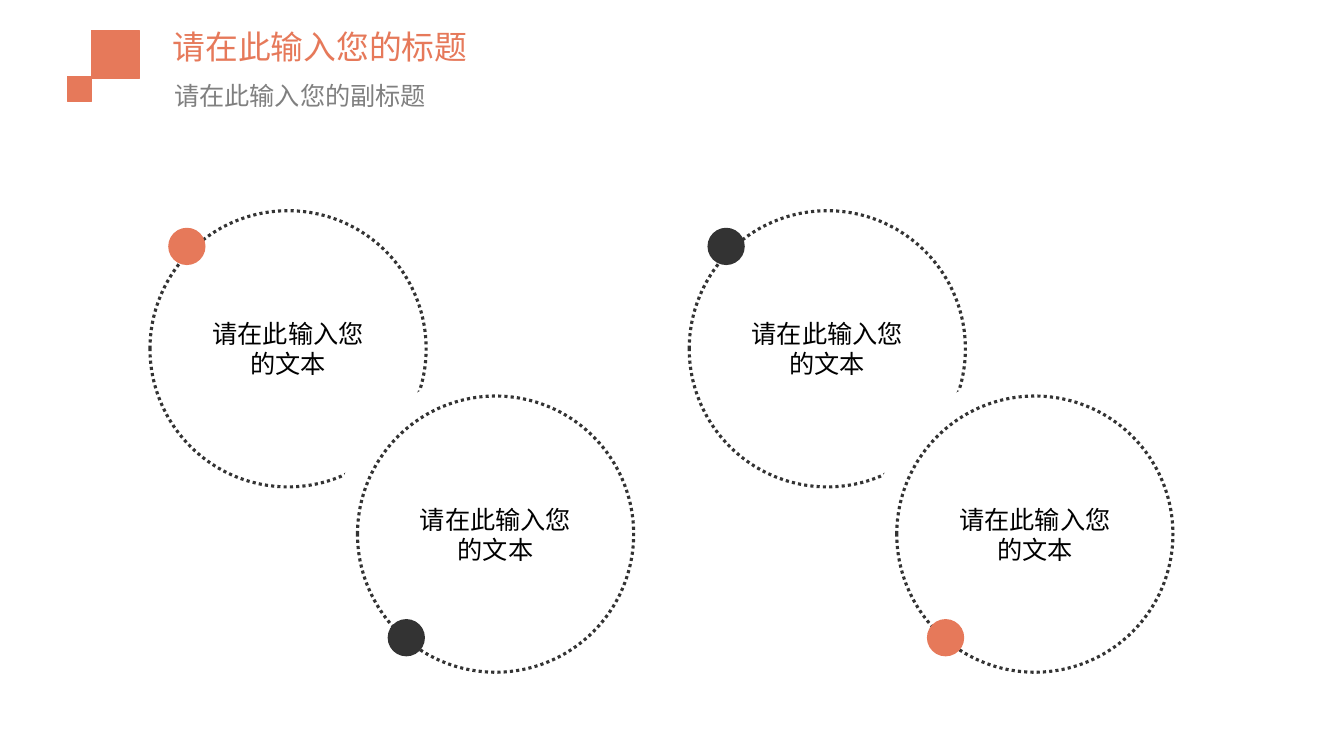
from pptx import Presentation
from pptx import util as u
from pptx.dml.color import RGBColor
from pptx.enum import dml, shapes, text

COLORS = {
    "accent": "E6795A",
    "dark": "333333",
    "gray": "808080",
    "black": "000000",
    "white": "FFFFFF",
}
RING_SIZE = 6.96
DOT_SIZE = 0.94
GAP_SIZE = 8.1


def color(name):
    return RGBColor.from_string(COLORS[name])


def write_text(shape, content, size, color_name, align=text.PP_ALIGN.LEFT,
               anchor=text.MSO_ANCHOR.MIDDLE, spacing=None):
    frame = shape.text_frame
    frame.word_wrap = True
    frame.vertical_anchor = anchor
    paragraph = frame.paragraphs[0]
    paragraph.alignment = align
    paragraph.line_spacing = spacing
    run = paragraph.add_run()
    run.text = content
    run.font.name = "Arial"
    run.font.size = u.Pt(size)
    run.font.color.rgb = color(color_name)


def add_figure(slide, kind, left, top, size, fill=None):
    shape = slide.shapes.add_shape(kind, u.Cm(left), u.Cm(top), u.Cm(size), u.Cm(size))
    shape.shadow.inherit = False
    if fill:
        shape.fill.solid()
        shape.fill.fore_color.rgb = color(fill)
    else:
        shape.fill.background()
    shape.line.fill.background()
    return shape


def add_square(slide, left, top, size):
    square = add_figure(slide, shapes.MSO_SHAPE.RECTANGLE, left, top, size, "accent")
    square.line.color.rgb = color("accent")
    square.line.width = u.Pt(0.75)


def add_circle(slide, left, top, size, fill=None):
    return add_figure(slide, shapes.MSO_SHAPE.OVAL, left, top, size, fill)


def add_ring(slide, left, top, content):
    ring = add_circle(slide, left, top, RING_SIZE)
    ring.line.color.rgb = color("dark")
    ring.line.width = u.Pt(2.25)
    ring.line.dash_style = dml.MSO_LINE.ROUND_DOT
    write_text(ring, content, 18, "black", align=text.PP_ALIGN.CENTER)


def add_ring_pair(slide, left, upper_color, lower_color):
    content = "请在此输入您的文本"
    add_ring(slide, left, 5.31, content)
    add_circle(slide, left + 0.46, 5.74, DOT_SIZE, upper_color)
    add_circle(slide, left + 4.62, 9.4, GAP_SIZE, "white")
    add_ring(slide, left + 5.23, 9.98, content)
    add_circle(slide, left + 5.99, 15.6, DOT_SIZE, lower_color)


def add_heading(slide, left, top, width, height, content, **text_format):
    box = slide.shapes.add_textbox(u.Cm(left), u.Cm(top), u.Cm(width), u.Cm(height))
    write_text(box, content, **text_format)


def main():
    presentation = Presentation()
    presentation.slide_width = u.Cm(33.87)
    presentation.slide_height = u.Cm(19.05)
    slide = presentation.slides.add_slide(presentation.slide_layouts[6])

    add_square(slide, 2.31, 0.77, 1.2)
    add_square(slide, 1.7, 1.94, 0.61)
    add_ring_pair(slide, 3.78, "accent", "dark")
    add_ring_pair(slide, 17.37, "dark", "accent")
    add_heading(slide, 4.1, 0.36, 24.28, 1.63, "请在此输入您的标题",
                size=23.4, color_name="accent")
    add_heading(slide, 4.14, 1.98, 24.23, 1.37, "请在此输入您的副标题",
                size=18, color_name="gray", anchor=text.MSO_ANCHOR.TOP, spacing=0.9)

    presentation.save("out.pptx")


if __name__ == "__main__":
    main()
